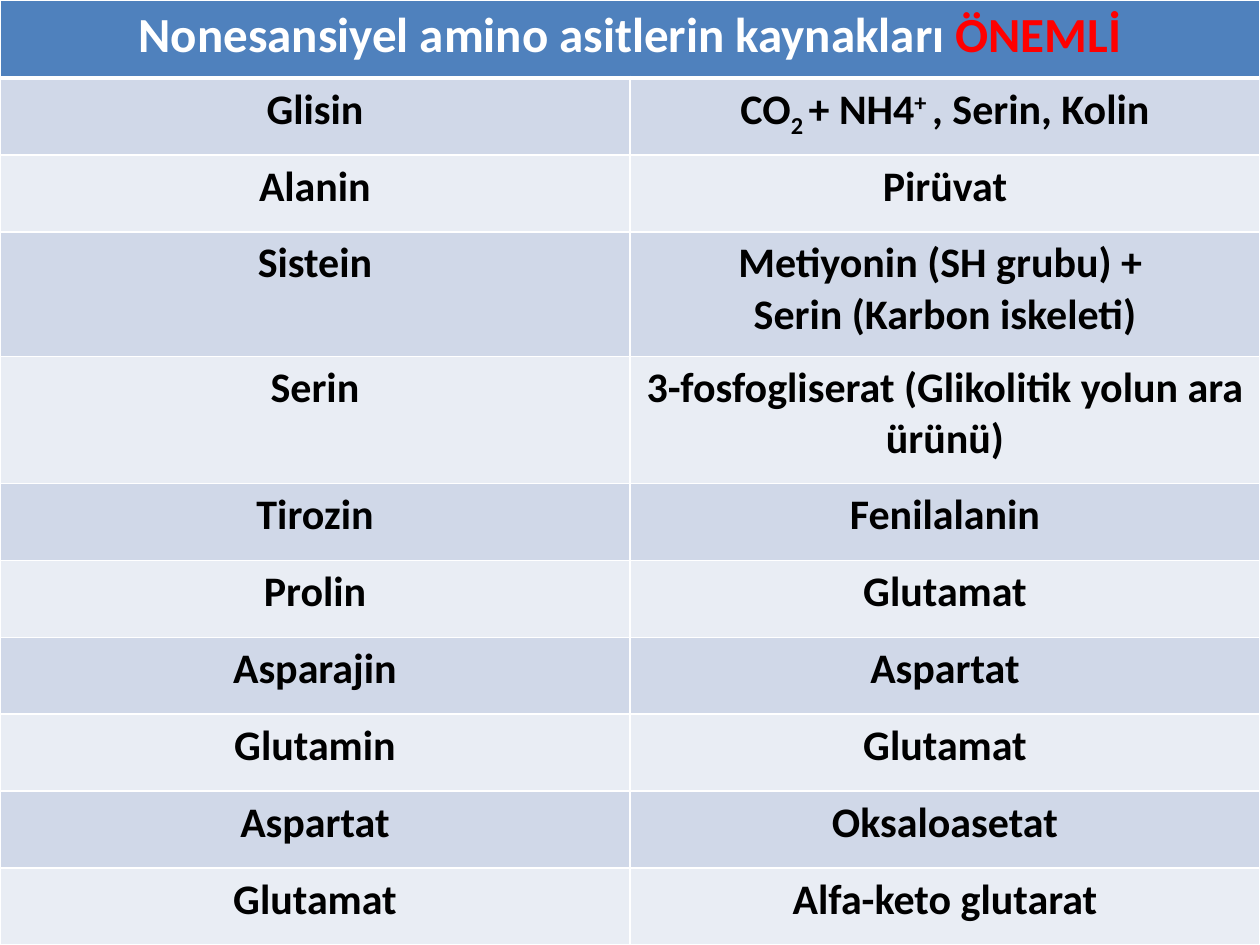
from dataclasses import dataclass

from lxml import etree
from pptx import Presentation
from pptx.dml.color import RGBColor
from pptx.enum.text import PP_ALIGN
from pptx.oxml.ns import qn
from pptx.util import Inches, Pt

CENTER = PP_ALIGN.CENTER
FONT = "Calibri"
WHITE, BLACK, RED = "FFFFFF", "000000", "FF0000"
BLUE, BANDS = "4F81BD", ("D0D8E8", "E9EDF4")


@dataclass
class Run:
    text: str
    color: str = BLACK
    size: int = 24
    shift: int = 0  # baseline, percent of the text size


@dataclass
class Row:
    amino: str
    source: list[list[Run]]
    height: float = 0.61


def plain(*lines: str) -> list[list[Run]]:
    """Give one paragraph of one run for each line."""
    return [[Run(line)] for line in lines]


TITLE = [[Run("Nonesansiyel amino asitlerin kaynakları ", WHITE, 28),
          Run("ÖNEMLİ", RED, 28)]]
TOP = 0.62
ROWS = [
    Row("Glisin", [[Run("CO"), Run("2 ", shift=-25), Run("+ NH4"),
                    Run("+ ", shift=30), Run(", Serin, Kolin")]]),
    Row("Alanin", plain("Pirüvat")),
    Row("Sistein", plain("Metiyonin (SH grubu) + ", "Serin (Karbon iskeleti)"), 0.99),
    Row("Serin", plain("3-fosfogliserat (Glikolitik yolun ara ürünü)"), 1.01),
    Row("Tirozin", plain("Fenilalanin")),
    Row("Prolin", plain("Glutamat")),
    Row("Asparajin", plain("Aspartat")),
    Row("Glutamin", plain("Glutamat")),
    Row("Aspartat", plain("Oksaloasetat")),
    Row("Glutamat", plain("Alfa-keto glutarat")),
]


def rgb(color: str) -> RGBColor:
    return RGBColor.from_string(color)


def edge(cell, top: float = 1, bottom: float = 1) -> None:
    """Draw white borders; widths are in points."""
    props = cell._tc.get_or_add_tcPr()
    sides = {"a:lnL": 1, "a:lnR": 1, "a:lnT": top, "a:lnB": bottom}
    for spot, (tag, width) in enumerate(sides.items()):
        line = etree.Element(qn(tag), w=str(Pt(width)))
        fill = etree.SubElement(line, qn("a:solidFill"))
        etree.SubElement(fill, qn("a:srgbClr"), val=WHITE)
        props.insert(spot, line)


def write(cell, lines: list[list[Run]], fill: str) -> None:
    cell.fill.solid()
    cell.fill.fore_color.rgb = rgb(fill)
    frame = cell.text_frame
    for i, line in enumerate(lines):
        para = frame.add_paragraph() if i else frame.paragraphs[0]
        para.alignment = CENTER
        for item in line:
            run = para.add_run()
            run.text = item.text
            font = run.font
            font.name, font.size, font.bold = FONT, Pt(item.size), True
            font.color.rgb = rgb(item.color)
            if item.shift:
                run._r.get_or_add_rPr().set("baseline", str(item.shift * 1000))


def main() -> None:
    deck = Presentation()
    deck.slide_width, deck.slide_height = Inches(10), Inches(7.5)
    slide = deck.slides.add_slide(deck.slide_layouts[6])
    table = slide.shapes.add_table(
        len(ROWS) + 1, 2, 0, 0, Inches(10), Inches(7.5)).table

    table.rows[0].height = Inches(TOP)
    head = table.cell(0, 0)
    head.merge(table.cell(0, 1))
    write(head, TITLE, BLUE)
    for col in range(2):
        edge(table.cell(0, col), bottom=3)

    for i, row in enumerate(ROWS, 1):
        table.rows[i].height = Inches(row.height)
        for col, lines in enumerate((plain(row.amino), row.source)):
            cell = table.cell(i, col)
            write(cell, lines, BANDS[(i - 1) % 2])
            edge(cell, top=3 if i == 1 else 1)

    deck.save("out.pptx")


if __name__ == "__main__":
    main()
